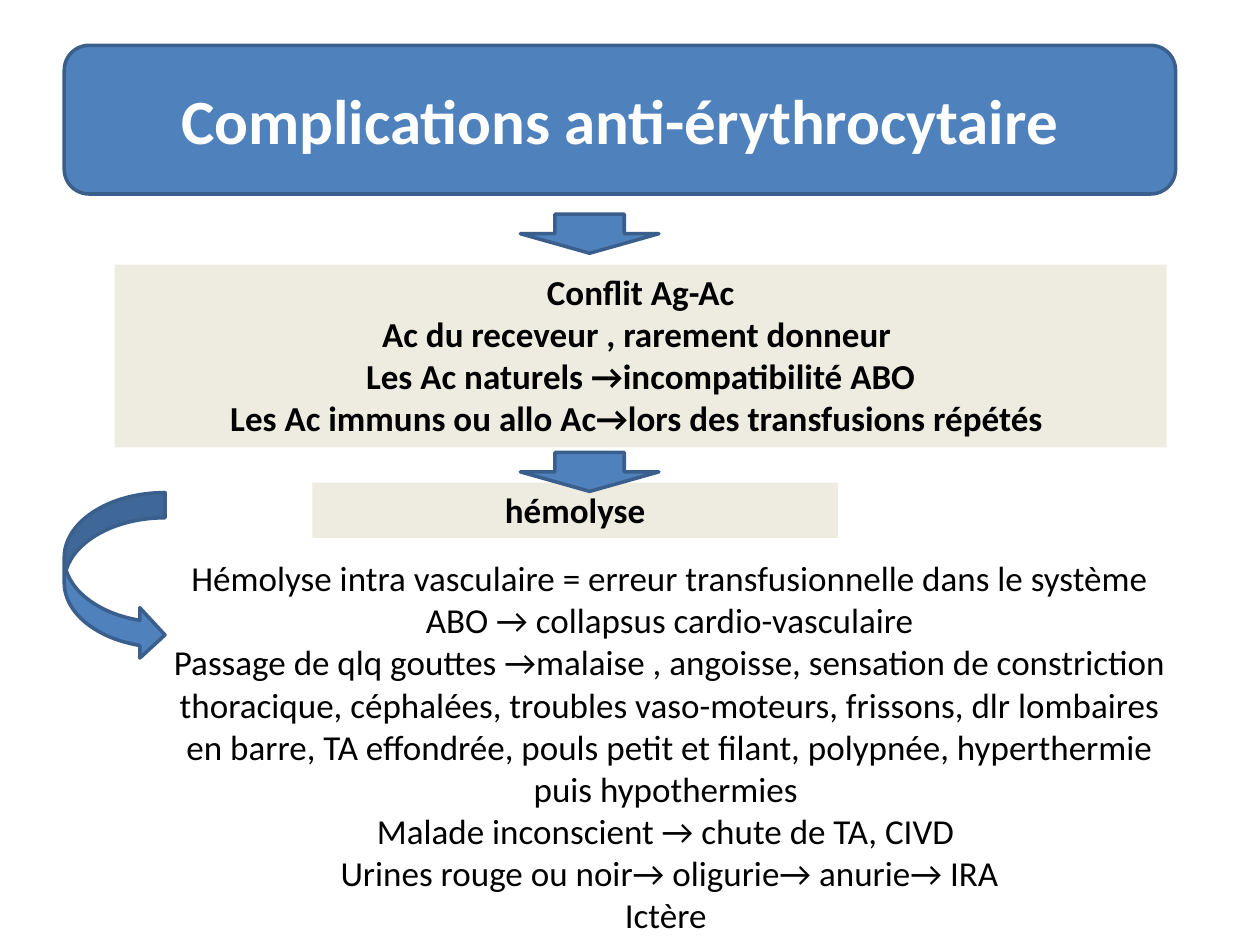
"""Build a slide on the complications of anti-erythrocyte conflicts."""
import pptx
import pptx.dml.color
import pptx.enum.shapes
import pptx.enum.text
import pptx.oxml
import pptx.oxml.ns
import pptx.util

Inches = pptx.util.Inches
Pt = pptx.util.Pt
RGBColor = pptx.dml.color.RGBColor
MSO_SHAPE = pptx.enum.shapes.MSO_SHAPE
MSO_ANCHOR = pptx.enum.text.MSO_ANCHOR
MSO_AUTO_SIZE = pptx.enum.text.MSO_AUTO_SIZE
PP_ALIGN = pptx.enum.text.PP_ALIGN

BLUE = RGBColor(0x4F, 0x81, 0xBD)
DARK_BLUE = RGBColor(0x3A, 0x5F, 0x8C)
CREAM = RGBColor(0xEE, 0xEC, 0xE1)
BLACK = RGBColor(0x00, 0x00, 0x00)
WHITE = RGBColor(0xFF, 0xFF, 0xFF)

TITLE = "Complications anti-érythrocytaire"
CONFLICT = [
    "Conflit Ag-Ac",
    "Ac du receveur , rarement donneur ",
    "Les Ac naturels →incompatibilité ABO",
    "Les Ac immuns ou allo Ac→lors des transfusions répétés ",
]
SIGNS = [
    "Hémolyse intra vasculaire = erreur transfusionnelle dans le système "
    "ABO → collapsus cardio-vasculaire",
    "Passage de qlq gouttes →malaise , angoisse, sensation de constriction "
    "thoracique, céphalées, troubles vaso-moteurs, frissons, dlr lombaires "
    "en barre, TA effondrée, pouls petit et filant, polypnée, hyperthermie "
    "puis hypothermies ",
    "Malade inconscient → chute de TA, CIVD ",
    "Urines rouge ou noir→ oligurie→ anurie→ IRA",
    "Ictère ",
]
BANNER_BOX = (0.51, 0.36, 8.82, 1.18)


def set_attributes(target, values):
    """Set each named value on the target."""
    for name, value in values.items():
        setattr(target, name, value)


def place(sp, box):
    """Move and size a shape to a box given in inches."""
    names = ("left", "top", "width", "height")
    set_attributes(sp, dict(zip(names, map(Inches, box))))


def write(sp, lines, anchor=MSO_ANCHOR.TOP, **font):
    """Fill a shape with centred, unbulleted paragraphs."""
    tf = sp.text_frame
    set_attributes(tf, {"word_wrap": True, "auto_size": MSO_AUTO_SIZE.NONE,
                        "vertical_anchor": anchor})
    tf.text = "\n".join(lines)
    values = {"name": "Calibri", "size": Pt(20), "bold": False} | font
    color = values.pop("color", BLACK)
    for p in tf.paragraphs:
        set_attributes(p, {"alignment": PP_ALIGN.CENTER, "space_before": Pt(0)})
        pPr = p._p.get_or_add_pPr()
        pPr.set("marL", "0")
        pPr.set("indent", "0")
        pPr.append(pptx.oxml.parse_xml(
            f"<a:buNone {pptx.oxml.ns.nsdecls('a')}/>"))
        for r in p.runs:
            set_attributes(r.font, values)
            r.font.color.rgb = color


def add_shape(s, kind, box, fill, line=None):
    """Add a flat preset shape, outlined when a line colour is given."""
    sp = s.shapes.add_shape(kind, *map(Inches, box))
    sp.shadow.inherit = False
    sp.fill.solid()
    sp.fill.fore_color.rgb = fill
    if line is None:
        sp.line.fill.background()
    else:
        sp.line.color.rgb = line
        sp.line.width = Pt(2)
    return sp


def add_title(s):
    """Set the title over a rounded banner."""
    banner = add_shape(s, MSO_SHAPE.ROUNDED_RECTANGLE, BANNER_BOX, BLUE, DARK_BLUE)
    title = s.shapes.title
    title._element.addprevious(banner._element)
    place(title, BANNER_BOX)
    write(title, [TITLE], MSO_ANCHOR.MIDDLE, size=Pt(36), bold=True, color=WHITE)


def add_panel(s, box, lines):
    """Add a cream panel of bold text."""
    sp = add_shape(s, MSO_SHAPE.RECTANGLE, box, CREAM)
    write(sp, lines, bold=True)


def main():
    """Build and save the slide."""
    prs = pptx.Presentation()
    prs.slide_width, prs.slide_height = Inches(10), Inches(7.5)
    s = prs.slides.add_slide(prs.slide_layouts[1])
    add_title(s)
    add_panel(s, (0.91, 2.1, 8.35, 1.45), CONFLICT)
    add_panel(s, (2.48, 3.83, 4.17, 0.44), ["hémolyse"])
    body = s.placeholders[1]
    place(body, (1.22, 4.37, 8.19, 3.13))
    write(body, SIGNS)
    for top in (1.7, 3.59):
        add_shape(s, MSO_SHAPE.DOWN_ARROW, (4.13, top, 1.1, 0.31), BLUE, DARK_BLUE)
    add_shape(s, MSO_SHAPE.CURVED_RIGHT_ARROW, (0.51, 3.91, 0.8, 1.33),
              BLUE, DARK_BLUE)
    prs.save("out.pptx")


if __name__ == "__main__":
    main()
